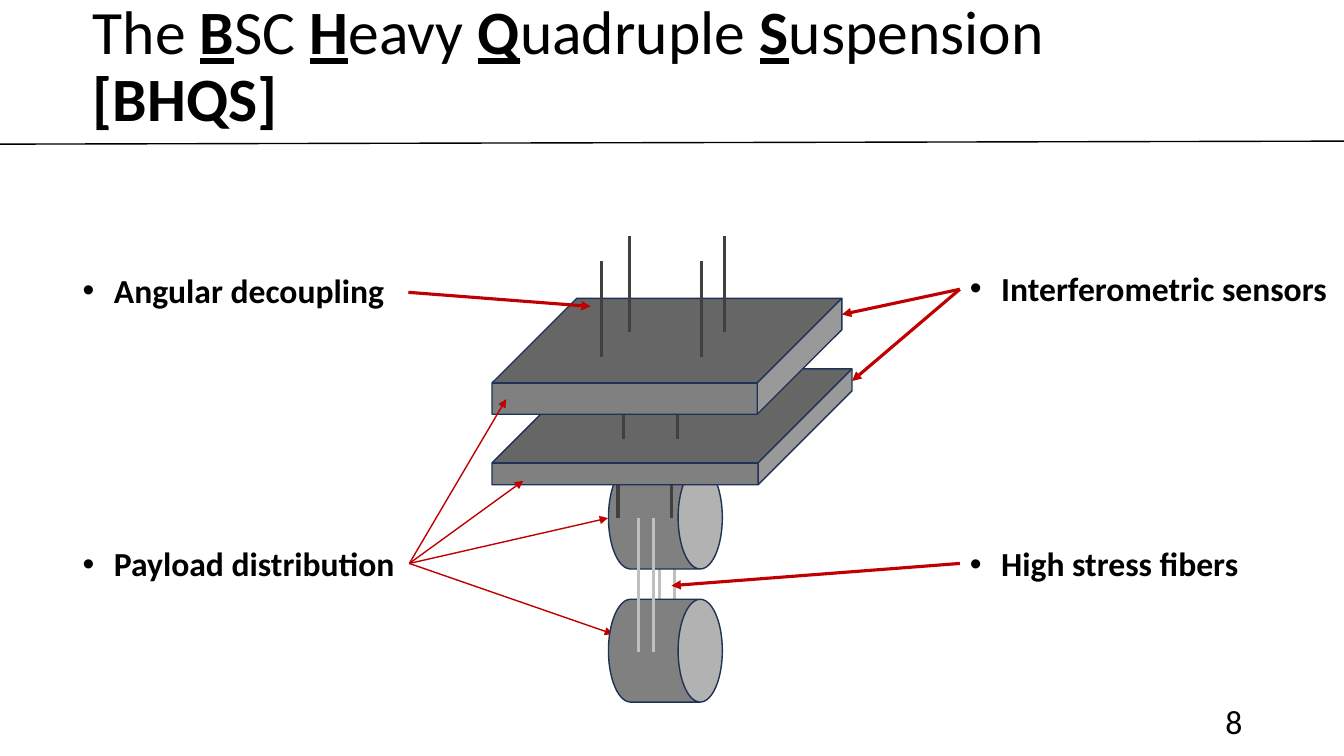
from dataclasses import dataclass

from lxml import etree
from pptx import Presentation
from pptx import util as u
from pptx.dml.color import RGBColor
from pptx.enum import shapes, text
from pptx.oxml import ns

PX = 9144
FONT = "Calibri"
BLACK = RGBColor(0x00, 0x00, 0x00)
STEEL = RGBColor(0x80, 0x80, 0x80)
OUTLINE = RGBColor(0x1E, 0x32, 0x56)
WIRE = RGBColor(0x40, 0x40, 0x40)
FIBER = RGBColor(0xBF, 0xBF, 0xBF)
ARROW = RGBColor(0xC0, 0x00, 0x00)


@dataclass(frozen=True)
class Strand:
    x: int
    bottom: int
    top: int
    color: RGBColor = WIRE


@dataclass(frozen=True)
class Pointer:
    start: tuple[int, int]
    end: tuple[int, int]
    width: float = 2.25


@dataclass(frozen=True)
class Stage:
    kind: shapes.MSO_SHAPE
    box: tuple[int, int, int, int]
    depth: float
    turn: int
    flip: str


@dataclass(frozen=True)
class Feature:
    slot: int
    wording: str
    left: int
    top: int
    width: int


CAN, CUBE = shapes.MSO_SHAPE.CAN, shapes.MSO_SHAPE.CUBE
PAYLOAD = (406, 559)
SENSORS = (952, 287)

REAR_FIBERS = [Strand(x, 645, 511, FIBER) for x in (654, 669)]
MASSES = [Stage(CAN, (609, top, 102, 113), 0.43, 90, "flipH") for top in (457, 589)]
FRONT_FIBERS = [Strand(x, 647, 514, FIBER) for x in (633, 648)]
MASS_WIRES = [Strand(x, 514, 477) for x in (613, 666)]
LOWER_PLATE = Stage(CUBE, (609, 245, 115, 357), 0.81, 270, "flipV")
PLATE_WIRES = [Strand(x, 436, 387) for x in (618, 672)]
UPPER_PLATE = Stage(CUBE, (604, 180, 115, 347), 0.73, 270, "flipV")
TOP_WIRES = [
    Strand(x, bottom, bottom - 95)
    for x, bottom in ((597, 354), (696, 354), (719, 329), (624, 329))
]
REAR_POINTERS = [
    Pointer(PAYLOAD, (608, 629), 1),
    Pointer((952, 559), (666, 581)),
    Pointer(SENSORS, (835, 312)),
    Pointer(SENSORS, (845, 378)),
    Pointer(PAYLOAD, (603, 514), 1),
]
FRONT_POINTERS = [
    Pointer(PAYLOAD, (502, 396), 1),
    Pointer(PAYLOAD, (519, 477), 1),
    Pointer((405, 290), (586, 304)),
]
FEATURES = [
    Feature(1, "Angular decoupling", 72, 263, 440),
    Feature(2, "Payload distribution", 72, 534, 334),
    Feature(3, "Interferometric sensors", 952, 261, 381),
    Feature(4, "High stress fibers", 952, 534, 381),
]
ACRONYM = [("The ", ""), ("B", "SC "), ("H", "eavy "), ("Q", "uadruple "), ("S", "uspension")]


def place(shape, left: int, top: int, width: int, height: int) -> None:
    shape.left, shape.top = left * PX, top * PX
    shape.width, shape.height = width * PX, height * PX


def add_text(paragraph, wording: str, *, size: int = 24, bold: bool = False,
             underline: bool = False) -> None:
    run = paragraph.add_run()
    run.text = wording
    run.font.name = FONT
    run.font.size = u.Pt(size)
    run.font.bold = bold
    run.font.underline = underline
    run.font.color.rgb = BLACK


def prepare(frame, anchor, align):
    frame.word_wrap = True
    frame.auto_size = text.MSO_AUTO_SIZE.NONE
    frame.vertical_anchor = anchor
    paragraph = frame.paragraphs[0]
    paragraph.alignment = align
    paragraph.space_before = u.Pt(0)
    return paragraph


def add_line(slide, start: tuple[int, int], end: tuple[int, int], color: RGBColor,
             width: float, arrow: bool = False) -> None:
    connector = slide.shapes.add_connector(
        shapes.MSO_CONNECTOR.STRAIGHT, *(value * PX for value in (*start, *end)))
    connector.line.color.rgb = color
    connector.line.width = u.Pt(width)
    properties = connector.element.spPr
    if arrow:
        outline = properties.find(ns.qn("a:ln"))
        etree.SubElement(outline, ns.qn("a:tailEnd")).set("type", "triangle")
    etree.SubElement(properties, ns.qn("a:effectLst"))


def add_strands(slide, strands: list[Strand]) -> None:
    for strand in strands:
        add_line(slide, (strand.x, strand.bottom), (strand.x, strand.top), strand.color, 2.25)


def add_pointers(slide, pointers: list[Pointer]) -> None:
    for pointer in pointers:
        add_line(slide, pointer.start, pointer.end, ARROW, pointer.width, arrow=True)


def add_stage(slide, stage: Stage) -> None:
    body = slide.shapes.add_shape(stage.kind, *(value * PX for value in stage.box))
    body.shadow.inherit = False
    body.adjustments[0] = stage.depth
    body.rotation = stage.turn
    body.element.spPr.find(ns.qn("a:xfrm")).set(stage.flip, "1")
    body.fill.solid()
    body.fill.fore_color.rgb = STEEL
    body.line.color.rgb = OUTLINE
    body.line.width = u.Pt(1)


def add_title(slide) -> None:
    title = slide.shapes.title
    place(title, 82, -5, 1150, 145)
    paragraph = prepare(title.text_frame, text.MSO_ANCHOR.MIDDLE, text.PP_ALIGN.LEFT)
    paragraph.line_spacing = 0.9
    for initial, rest in ACRONYM:
        marked = bool(rest)
        add_text(paragraph, initial, size=44, bold=marked, underline=marked)
        if rest:
            add_text(paragraph, rest, size=44)
    paragraph.add_line_break()
    add_text(paragraph, "[BHQS]", size=44, bold=True)


def add_feature(slide, feature: Feature) -> None:
    label = slide.placeholders[feature.slot]
    place(label, feature.left, feature.top, feature.width, 50)
    paragraph = prepare(label.text_frame, text.MSO_ANCHOR.TOP, text.PP_ALIGN.LEFT)
    properties = paragraph._p.get_or_add_pPr()
    properties.set("marL", str(31 * PX))
    properties.set("indent", str(-31 * PX))
    etree.SubElement(properties, ns.qn("a:buFont")).set("typeface", "Arial")
    etree.SubElement(properties, ns.qn("a:buChar")).set("char", "•")
    add_text(paragraph, feature.wording, bold=True)


def main() -> None:
    deck = Presentation()
    deck.slide_width, deck.slide_height = 1333 * PX, 750 * PX
    slide = deck.slides.add_slide(deck.slide_layouts[4])
    add_title(slide)
    for feature in FEATURES:
        add_feature(slide, feature)

    add_strands(slide, REAR_FIBERS)
    add_pointers(slide, REAR_POINTERS)
    for mass in MASSES:
        add_stage(slide, mass)
    add_strands(slide, FRONT_FIBERS + MASS_WIRES)
    add_stage(slide, LOWER_PLATE)
    add_strands(slide, PLATE_WIRES)
    add_stage(slide, UPPER_PLATE)
    add_strands(slide, TOP_WIRES)
    add_pointers(slide, FRONT_POINTERS)

    page_number = slide.shapes.add_textbox(942 * PX, 695 * PX, 300 * PX, 40 * PX)
    add_text(prepare(page_number.text_frame, text.MSO_ANCHOR.MIDDLE, text.PP_ALIGN.RIGHT), "8")
    add_line(slide, (0, 143), (1333, 140), BLACK, 1)
    deck.save("out.pptx")


if __name__ == "__main__":
    main()
